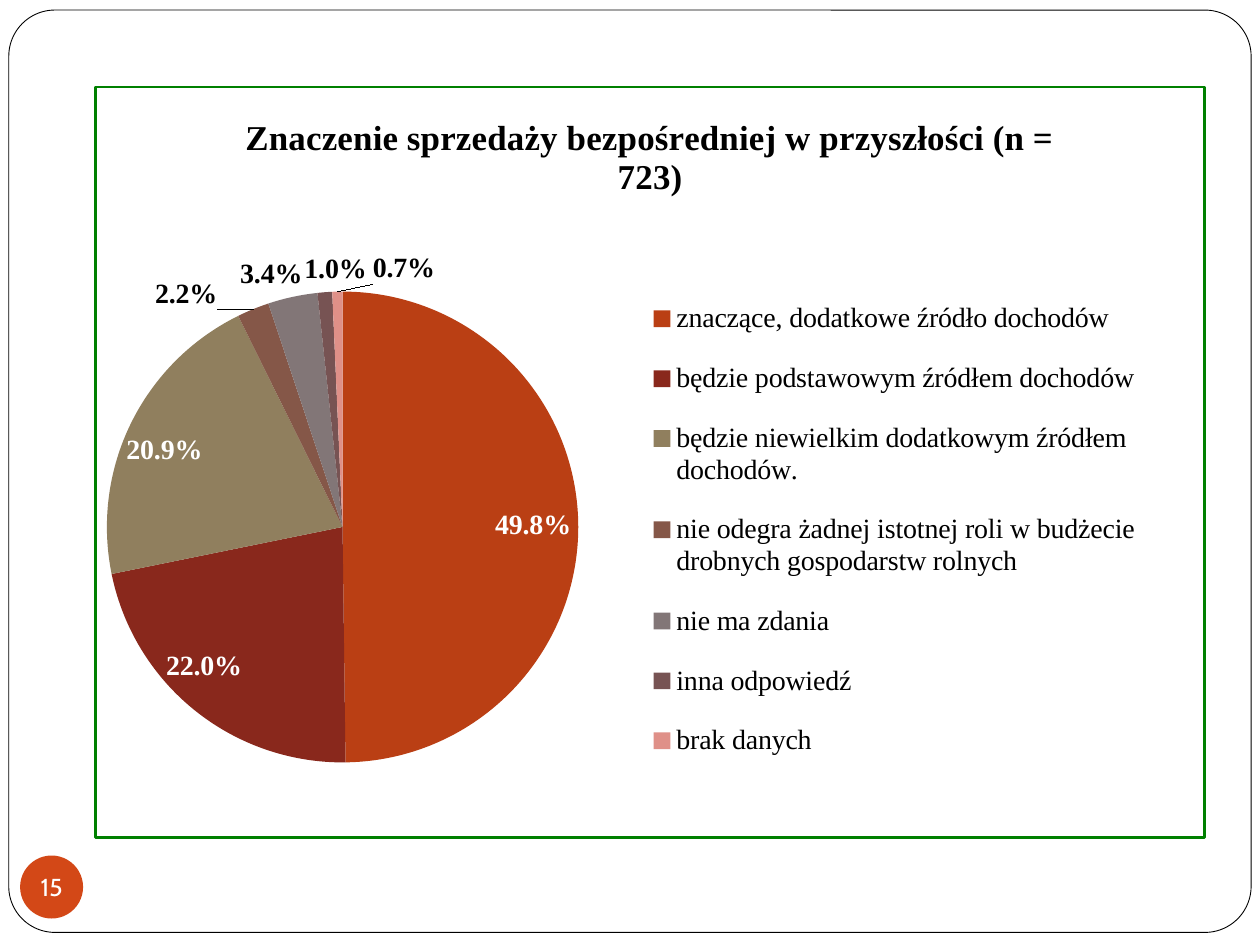
import pptx
import pptx.chart.data
import pptx.dml.color
import pptx.enum.chart
import pptx.enum.shapes
import pptx.enum.text
import pptx.oxml
import pptx.util
from pptx.util import Inches

COLORS = {"white": "FFFFFF", "black": "000000", "orange": "D34817", "green": "008000"}
SERIF = "Times New Roman"
CHART_WIDTH, CHART_HEIGHT = 8.82, 5.98
# answer, share, slice colour
ANSWERS = [
    ("znaczące, dodatkowe źródło dochodów", 0.498, "BA3F14"),
    ("będzie podstawowym źródłem dochodów", 0.22, "89281C"),
    ("będzie niewielkim dodatkowym źródłem dochodów.", 0.209, "907F5E"),
    ("nie odegra żadnej istotnej roli w budżecie drobnych gospodarstw rolnych", 0.022, "855748"),
    ("nie ma zdania", 0.034, "827677"),
    ("inna odpowiedź", 0.01, "775353"),
    ("brak danych", 0.007, "DF9088"),
]
LABEL_SHIFTS = {1: (-0.03, -0.03), 2: (-0.01, 0.01), 3: (-0.03, 0.01),
                4: (0.01, 0), 5: (0.01, 0), 6: (0.06, 0)}
CHART_NS = ('xmlns:c="http://schemas.openxmlformats.org/drawingml/2006/chart" '
            'xmlns:a="http://schemas.openxmlformats.org/drawingml/2006/main"')


def style_font(font, size, color, bold=False, name=SERIF):
    font.name = name
    font.size = pptx.util.Pt(size)
    font.bold = bold
    font.color.rgb = pptx.dml.color.RGBColor.from_string(COLORS[color])


def manual_layout(x, y, size=None, target=""):
    """Chart layout in fractions; without a size, x and y are offsets."""
    parts = [f'<c:layoutTarget val="{target}"/>'] if target else []
    if size:
        parts += ['<c:xMode val="edge"/>', '<c:yMode val="edge"/>']
    parts += [f'<c:x val="{x}"/>', f'<c:y val="{y}"/>']
    if size:
        parts += [f'<c:w val="{size[0]}"/>', f'<c:h val="{size[1]}"/>']
    return pptx.oxml.parse_xml(f'<c:layout {CHART_NS}><c:manualLayout>{"".join(parts)}'
                               '</c:manualLayout></c:layout>')


deck = pptx.Presentation()
deck.slide_width, deck.slide_height = Inches(10), Inches(7.5)
page = deck.slides.add_slide(deck.slide_layouts[6])

# Page frame
frame = page.shapes.add_shape(pptx.enum.shapes.MSO_SHAPE.ROUNDED_RECTANGLE,
                              Inches(0.07), Inches(0.08), Inches(9.86), Inches(7.32))
frame.adjustments[0] = 0.05
frame.shadow.inherit = False
frame.fill.solid()
frame.fill.fore_color.rgb = pptx.dml.color.RGBColor.from_string(COLORS["white"])
frame.line.color.rgb = pptx.dml.color.RGBColor.from_string(COLORS["black"])
frame.line.width = pptx.util.Pt(0.5)

# Page number
badge = page.shapes.add_shape(pptx.enum.shapes.MSO_SHAPE.OVAL,
                              Inches(0.16), Inches(6.79), Inches(0.5), Inches(0.5))
badge.shadow.inherit = False
badge.fill.solid()
badge.fill.fore_color.rgb = pptx.dml.color.RGBColor.from_string(COLORS["orange"])
badge.line.fill.background()
box = badge.text_frame
box.margin_left = box.margin_right = box.margin_top = box.margin_bottom = 0
box.word_wrap = False
box.vertical_anchor = pptx.enum.text.MSO_ANCHOR.MIDDLE
para = box.paragraphs[0]
para.text = "15"
para.alignment = pptx.enum.text.PP_ALIGN.CENTER
style_font(para.font, 14, "white", name="Cabin")

# Pie chart
data = pptx.chart.data.CategoryChartData(number_format="0.0%")
data.categories = [answer for answer, share, color in ANSWERS]
data.add_series("Series 1", [share for answer, share, color in ANSWERS])
chart = page.shapes.add_chart(pptx.enum.chart.XL_CHART_TYPE.PIE, Inches(0.75), Inches(0.68),
                              Inches(CHART_WIDTH), Inches(CHART_HEIGHT), data).chart
style_font(chart.font, 11, "black")

chart.has_title = True
para = chart.chart_title.text_frame.paragraphs[0]
para.text = "Znaczenie sprzedaży bezpośredniej w przyszłości (n = 723)"
style_font(para.font, 20, "black", bold=True)

chart.has_legend = True
legend = chart.legend
legend.position = pptx.enum.chart.XL_LEGEND_POSITION.RIGHT
legend.include_in_layout = False
style_font(legend.font, 16, "black")
legend_xml = chart.element.find(".//{*}legend")
legend_xml.find("{*}legendPos").addnext(manual_layout(0.49, 0.25, (0.46, 0.68)))

plot_area = chart.element.find(".//{*}plotArea")
for layout in plot_area.findall("{*}layout"):
    plot_area.remove(layout)
plot_size = (3.75 / CHART_WIDTH, 4.57 / CHART_HEIGHT)
plot_area.insert(0, manual_layout(0.01, 1.22 / CHART_HEIGHT, plot_size, "inner"))

chart.element.find("{*}chart").addnext(pptx.oxml.parse_xml(
    f'<c:spPr {CHART_NS}><a:noFill/><a:ln w="{pptx.util.Pt(1.5)}"><a:solidFill>'
    f'<a:srgbClr val="{COLORS["green"]}"/></a:solidFill></a:ln></c:spPr>'))

# Slices and their labels
plot = chart.plots[0]
plot.vary_by_categories = True
series = plot.series[0]
positions = pptx.enum.chart.XL_LABEL_POSITION
labels = series.data_labels
labels.show_value = True
labels.show_percentage = False
labels.number_format = "0.0%"
labels.number_format_is_linked = False
labels.position = positions.INSIDE_END
style_font(labels.font, 16, "white", bold=True)

for index, (answer, share, color) in enumerate(ANSWERS):
    point = series.points[index]
    point.format.fill.solid()
    point.format.fill.fore_color.rgb = pptx.dml.color.RGBColor.from_string(color)
    point.format.line.fill.background()
    if index in LABEL_SHIFTS:
        small = share < 0.1
        label = point.data_label
        style_font(label.font, 16, "black" if small else "white", bold=True)
        label.position = positions.OUTSIDE_END if small else positions.INSIDE_END
        label_index = chart.element.find(f'.//{{*}}dLbl/{{*}}idx[@val="{index}"]')
        label_index.addnext(manual_layout(*LABEL_SHIFTS[index]))

deck.save("out.pptx")
